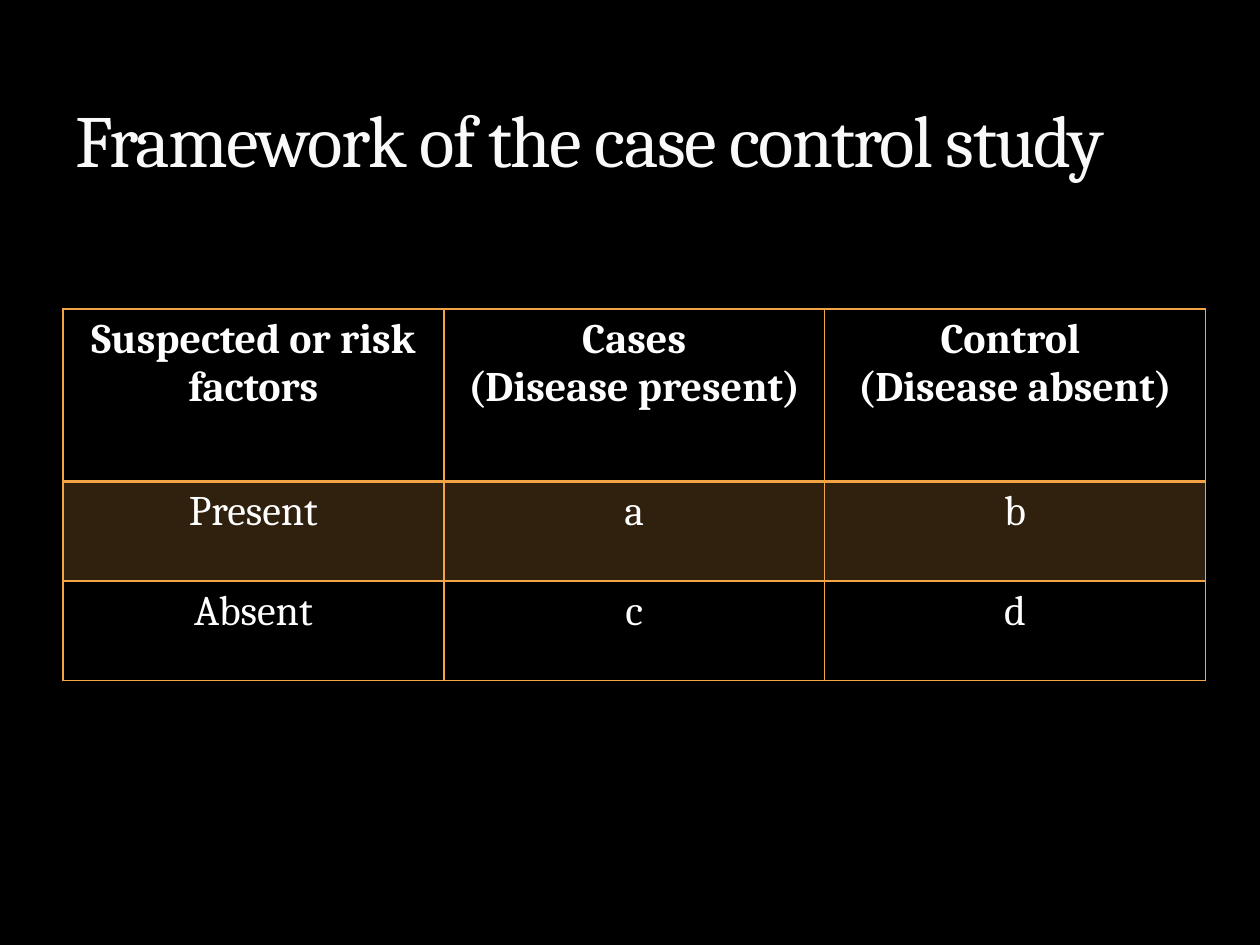
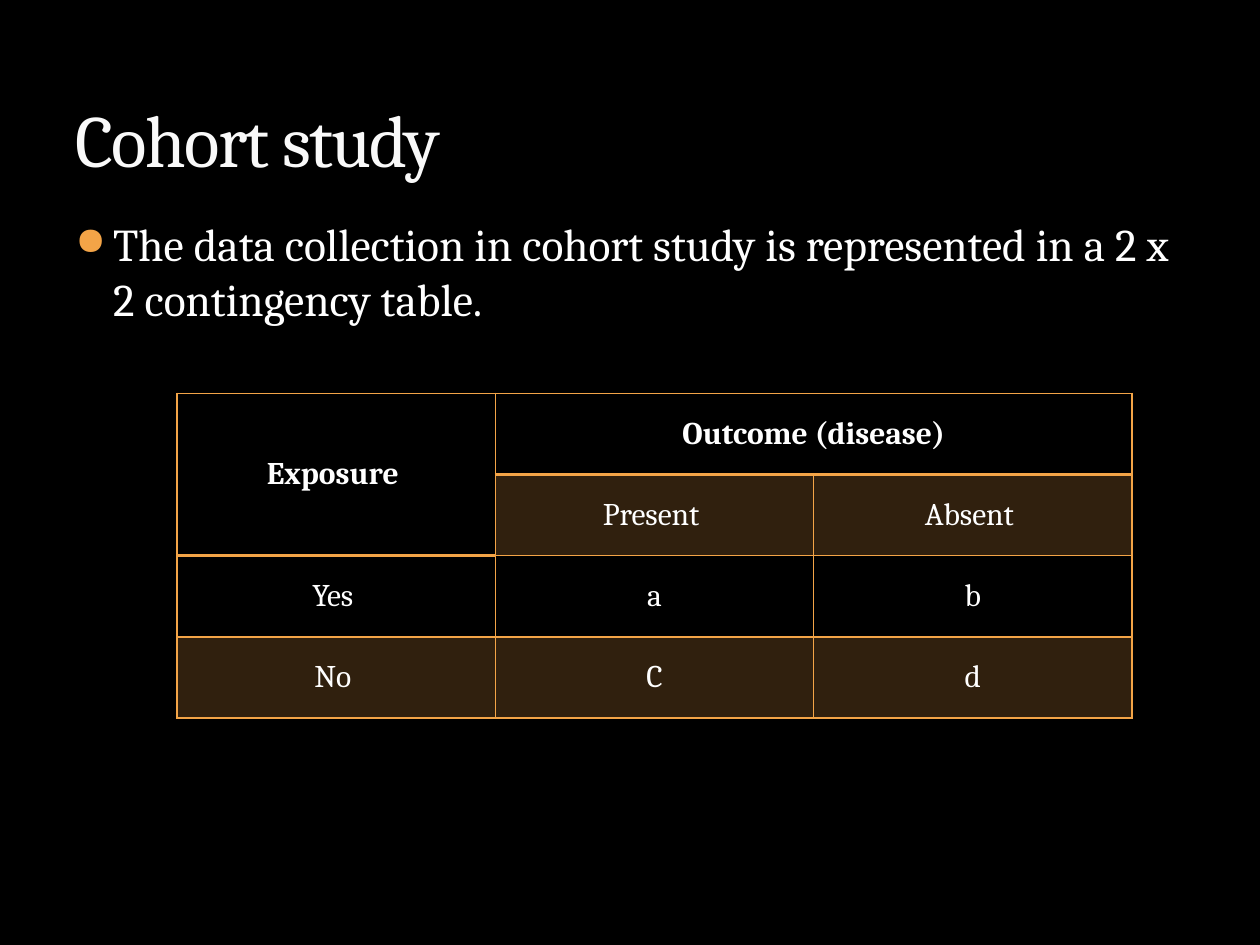
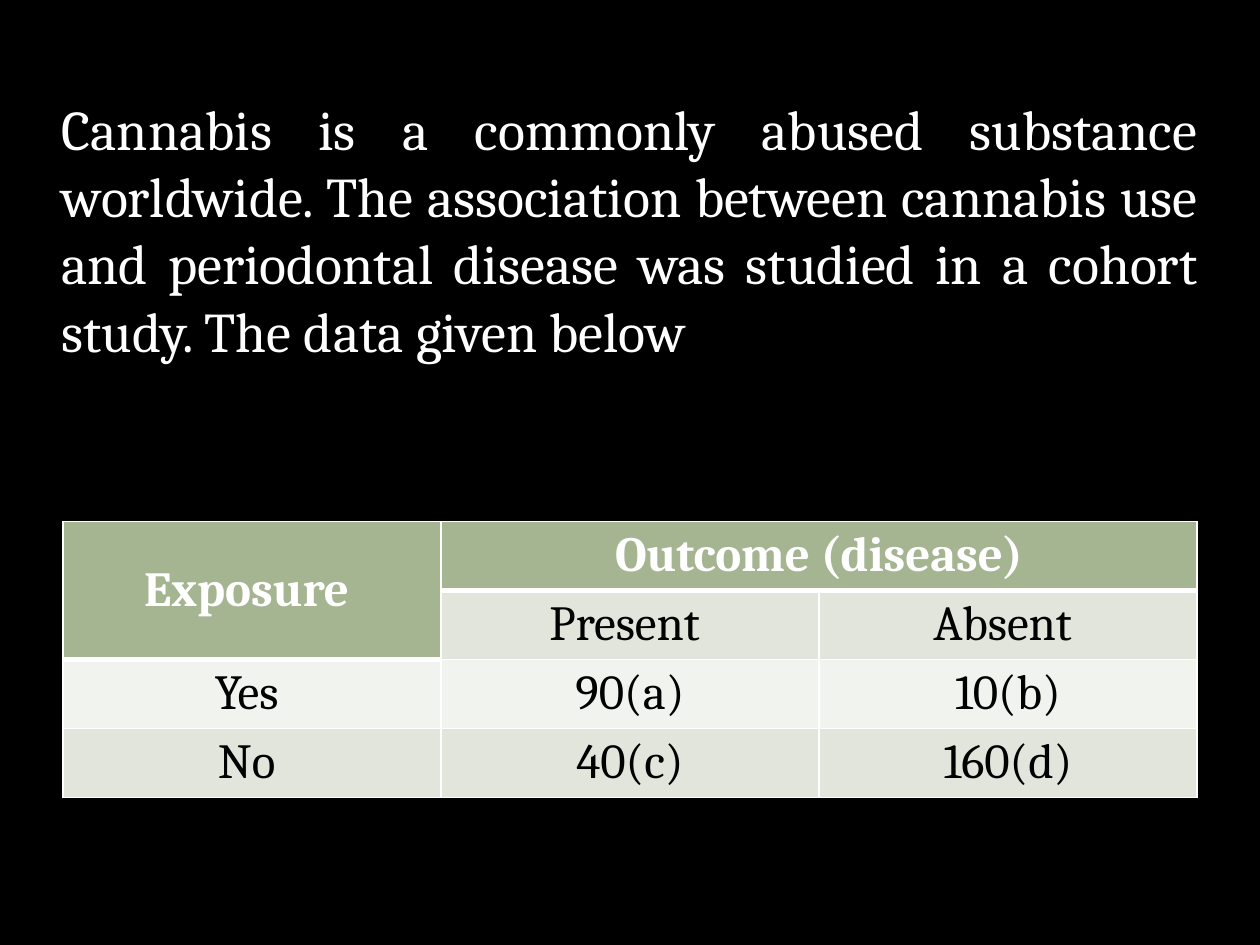
from lxml import etree
from pptx import Presentation
from pptx.dml.color import RGBColor
from pptx.enum.text import MSO_ANCHOR, MSO_AUTO_SIZE, PP_ALIGN
from pptx.oxml.ns import qn
from pptx.util import Pt

LEFT, MID, JUST = PP_ALIGN.LEFT, PP_ALIGN.CENTER, PP_ALIGN.JUSTIFY
TOP, CENTRE, BASE = MSO_ANCHOR.TOP, MSO_ANCHOR.MIDDLE, MSO_ANCHOR.BOTTOM
FIT, FIXED = MSO_AUTO_SIZE.SHAPE_TO_FIT_TEXT, MSO_AUTO_SIZE.NONE

INK = {
    "black": "000000", "white": "FFFFFF", "title": "F9F9F9", "edge": "3C4422",
    "amber": "F3A447", "sage": "A5B592", "mist": "E1E5DC", "pale": "F0F3EE",
}
FONT = "Cambria"
THIN = 1

# Fills are pairs of colour and opacity in percent; bands repeat below the head.
DARK = {"line": "amber", "head": None, "bands": [("amber", 20), None],
        "text": "white", "heavy": 2}
LIGHT = {"line": "white", "head": ("sage", 100),
         "bands": [("mist", 100), ("pale", 100)], "text": "black", "heavy": 3}


def add(parent, tag, **values):
    node = etree.SubElement(parent, qn(tag))
    for key, value in values.items():
        node.set(key, str(value))
    return node


def paint(parent, fill):
    if fill is None:
        add(parent, "a:noFill")
        return
    name, alpha = fill
    colour = add(add(parent, "a:solidFill"), "a:srgbClr", val=INK[name])
    if alpha < 100:
        add(colour, "a:alpha", val=alpha * 1000)


class Deck:
    def __init__(self):
        self.show = Presentation()
        self.show.slide_width, self.show.slide_height = Pt(720), Pt(540)
        back = self.show.slide_master.background.fill
        back.solid()
        back.fore_color.rgb = RGBColor.from_string(INK["black"])
        self.slide = None

    def start(self, title=None):
        layout = self.show.slide_layouts[5 if title else 6]
        self.slide = self.show.slides.add_slide(layout)
        if title:
            self.title(title)

    def letter(self, frame, text, size, ink, align=LEFT, bold=False):
        """Fill a text frame and format all its runs."""
        frame.text = text
        look = {"name": FONT, "size": Pt(size), "bold": bold}
        for para in frame.paragraphs:
            para.alignment = align
            for run in para.runs:
                for key, value in look.items():
                    setattr(run.font, key, value)
                run.font.color.rgb = RGBColor.from_string(INK[ink])

    def title(self, text):
        shape = self.slide.shapes.title
        place = {"left": 36, "top": 12, "width": 648, "height": 96}
        for key, value in place.items():
            setattr(shape, key, Pt(value))
        frame = shape.text_frame
        frame.vertical_anchor, frame.auto_size = BASE, FIXED
        self.letter(frame, text, 42, "title")
        props = frame.paragraphs[0].runs[0].font._element
        props.set("spc", "-100")
        line = etree.Element(qn("a:ln"), w=str(Pt(0.25)))
        paint(line, ("edge", 25))
        props.insert(0, line)

    def text(self, box, text, size, align=LEFT, bullet=False):
        shape = self.slide.shapes.add_textbox(*map(Pt, box))
        frame = shape.text_frame
        frame.word_wrap = True
        frame.auto_size = FIXED if bullet else FIT
        self.letter(frame, text, size, "white", align)
        if bullet:
            self.bullet(frame.paragraphs[0])

    def bullet(self, para):
        para.space_before = Pt(6)
        props = para._p.get_or_add_pPr()
        props.set("marL", str(Pt(21.6)))
        props.set("indent", str(-Pt(21.6)))
        add(add(props, "a:buClr"), "a:srgbClr", val=INK["amber"])
        add(props, "a:buSzPct", val=85000)
        add(props, "a:buChar", char="●")

    def table(self, spot, wide, highs, rows, look, size, anchor=CENTRE):
        """Draw rows of text; None marks a cell joined to its neighbour."""
        count = len(rows[0])
        box = (*spot, wide * count, sum(highs))
        table = self.slide.shapes.add_table(len(rows), count, *map(Pt, box)).table
        table.first_row = table.horz_banding = False
        for col in table.columns:
            col.width = Pt(wide)
        for row, high in zip(table.rows, highs):
            row.height = Pt(high)
        joined = rows[1][0] is None
        heads = {(0, c) for c in range(count)} | ({(1, 0)} if joined else set())
        for r, row in enumerate(rows):
            for c, text in enumerate(row):
                cell, head = table.cell(r, c), (r, c) in heads
                cell.vertical_anchor = anchor
                if text is not None:
                    ink = "white" if head else look["text"]
                    self.letter(cell.text_frame, text, size, ink, MID, head)
                under = (r - 1, c) in heads and not head
                self.border(cell, look, under, head)
                band = look["bands"][(r - 1) % 2]
                paint(cell._tc.get_or_add_tcPr(), look["head"] if head else band)
        if joined:
            table.cell(0, 0).merge(table.cell(1, 0))
            table.cell(0, 1).merge(table.cell(0, 2))

    def border(self, cell, look, top, base):
        """Border a cell, with a heavy top or base where asked."""
        props = cell._tc.get_or_add_tcPr()
        for side, heavy in zip("LRTB", (False, False, top, base)):
            width = look["heavy"] if heavy else THIN
            line = add(props, f"a:ln{side}", w=Pt(width))
            paint(line, (look["line"], 100))


def cross(a, b, c, d):
    """Lay four values out under the exposure and outcome heads."""
    return [["Exposure ", "Outcome (disease)", None],
            [None, "Present ", "Absent "],
            ["Yes ", a, b],
            ["No ", c, d]]


def main():
    deck = Deck()

    deck.start("Framework of the case control study")
    rows = [["Suspected or risk factors", "Cases\n(Disease present)",
             "Control \n(Disease absent)"],
            ["Present", "a", "b"],
            ["Absent", "c", "d"]]
    deck.table((36, 176.6), 217.6, [98.4, 57, 57], rows, DARK, 24, TOP)

    deck.start("Cohort study")
    deck.text((36, 120, 648, 360), "The data collection in cohort study is "
              "represented in a 2 x 2 contingency table.", 26, bullet=True)
    deck.table((101.2, 224.8), 181.9, [46.4] * 4, cross("a", "b", "C", "d"),
               DARK, 18)

    deck.start()
    deck.table((36, 298), 216, [39.4] * 4,
               cross("90(a)", "10(b)", "40(c)", "160(d)"), LIGHT, 28)
    deck.text((28, 50.4, 664, 162.8), "Cannabis is a commonly abused substance "
              "worldwide. The association between cannabis use and periodontal "
              "disease was studied in a cohort study. The data given below",
              32, JUST)

    deck.show.save("out.pptx")


if __name__ == "__main__":
    main()
